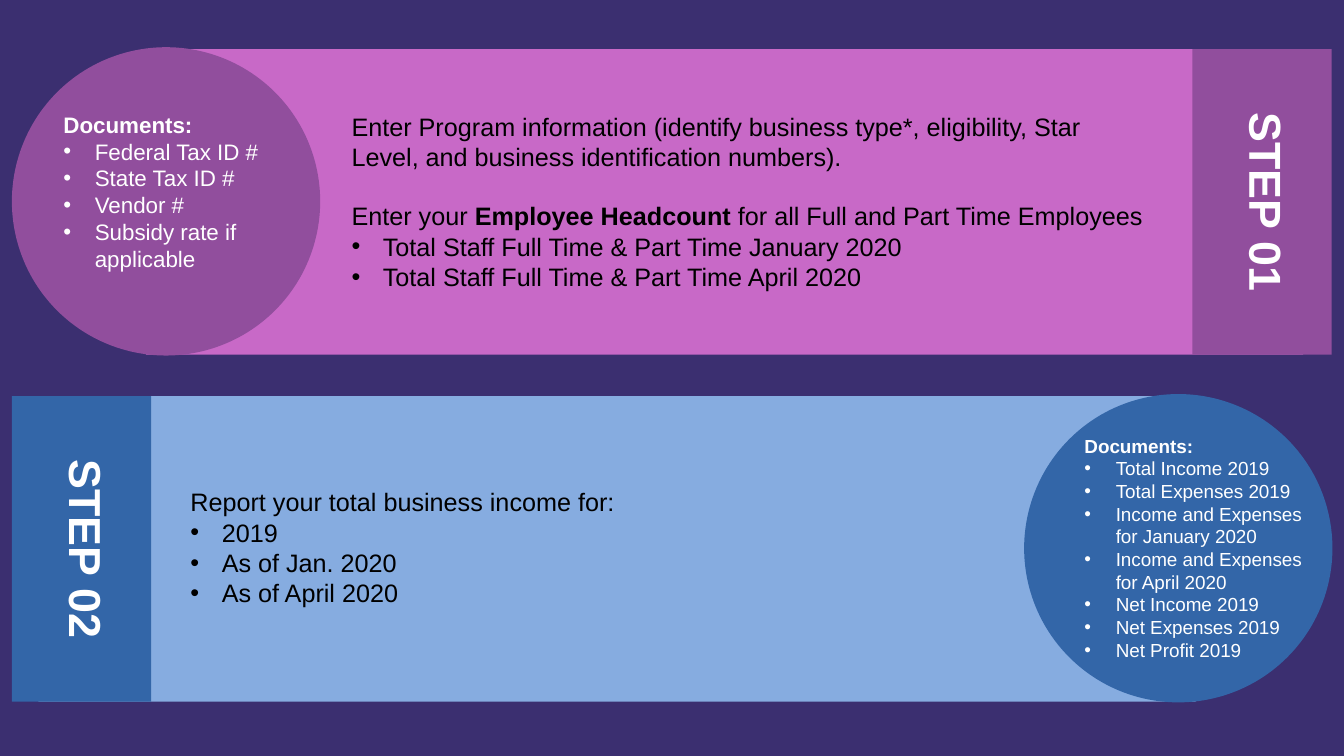
"""Builds a slide with two step panels, each with a task and its documents."""
from dataclasses import dataclass

from lxml import etree
from pptx import Presentation
from pptx.dml.color import RGBColor
from pptx.enum.shapes import MSO_SHAPE
from pptx.enum.text import MSO_AUTO_SIZE, PP_ALIGN
from pptx.oxml.ns import qn
from pptx.shapes.autoshape import Shape
from pptx.shapes.shapetree import GroupShapes, SlideShapes
from pptx.util import Cm, Pt

RECT = MSO_SHAPE.RECTANGLE
OVAL = MSO_SHAPE.OVAL
CENTER = PP_ALIGN.CENTER
FIT_TEXT = MSO_AUTO_SIZE.SHAPE_TO_FIT_TEXT

BAND_W, BAND_H = 29.16, 7.7
TAB_W, LABEL_W = 3.51, 1.88
CIRCLE = 7.77
CIRCLE_RISE = 0.05
INDENT = 0.79


@dataclass(frozen=True)
class Theme:
    """Colours, font and type sizes of the slide."""
    background: str = "3B2F70"
    pink: str = "C869C7"
    purple: str = "914E9D"
    light_blue: str = "86ACE0"
    blue: str = "3366A8"
    dark_text: str = "000000"
    light_text: str = "FFFFFF"
    font: str = "Arial"
    label_size: float = 32
    body_size: float = 18
    docs_size: float = 16
    small_docs_size: float = 13.5
    gap: float = 21


THEME = Theme()


@dataclass(frozen=True)
class Run:
    """A stretch of text with one weight."""
    text: str
    bold: bool = False


@dataclass(frozen=True)
class Para:
    """A paragraph made of runs."""
    runs: tuple[Run, ...]
    bullet: bool = False
    gap: float = 0


@dataclass(frozen=True)
class TextBlock:
    """A text box with its place in centimetres, size and colour."""
    left: float
    top: float
    width: float
    height: float
    size: float
    color: str
    paras: tuple[Para, ...]


@dataclass(frozen=True)
class Panel:
    """A step's band, circle, tab and label."""
    label: str
    top: float
    band_left: float
    circle_left: float
    tab_left: float
    label_left: float
    light: str
    dark: str


def line(text: str, bold: bool = False) -> Para:
    """Return a plain paragraph."""
    return Para((Run(text, bold),))


def bullets(*texts: str) -> tuple[Para, ...]:
    """Return one bulleted paragraph for each text."""
    return tuple(Para((Run(text),), bullet=True) for text in texts)


PANELS = (
    Panel("STEP 01", 1.24, 3.68, 0.3, 30.05, 30.86, THEME.pink, THEME.purple),
    Panel("STEP 02", 9.98, 0.97, 25.81, 0.3, 1.12, THEME.light_blue, THEME.blue),
)

BLOCKS = (
    TextBlock(8.61, 2.67, 20.73, 4.88, THEME.body_size, THEME.dark_text, (
        line("Enter Program information (identify business type*, eligibility, "
             "Star Level, and business identification numbers)."),
        Para((Run("Enter your "), Run("Employee Headcount", True),
              Run(" for all Full and Part Time Employees")), gap=THEME.gap),
        *bullets("Total Staff Full Time & Part Time January 2020",
                 "Total Staff Full Time & Part Time April 2020"))),
    TextBlock(1.35, 2.67, 5.69, 5.13, THEME.docs_size, THEME.light_text, (
        line("Documents:", True),
        *bullets("Federal Tax ID #", "State Tax ID #", "Vendor #",
                 "Subsidy rate if applicable"))),
    TextBlock(4.55, 12.14, 20.93, 3.33, THEME.body_size, THEME.dark_text, (
        line("Report your total business income for:"),
        *bullets("2019", "As of Jan. 2020", "As of April 2020"))),
    TextBlock(27.08, 10.82, 6.4, 6.02, THEME.small_docs_size, THEME.light_text, (
        line("Documents:", True),
        *bullets("Total Income 2019", "Total Expenses 2019",
                 "Income and Expenses for January 2020",
                 "Income and Expenses for April 2020",
                 "Net Income 2019", "Net Expenses 2019", "Net Profit 2019"))),
)


def add_block(shapes: SlideShapes | GroupShapes, block: TextBlock) -> Shape:
    """Add a text box and fill it run by run."""
    sp = shapes.add_textbox(Cm(block.left), Cm(block.top),
                            Cm(block.width), Cm(block.height))
    tf = sp.text_frame
    tf.word_wrap = True
    tf.auto_size = FIT_TEXT
    for i, para in enumerate(block.paras):
        p = tf.add_paragraph() if i else tf.paragraphs[0]
        if para.gap:
            p.space_before = Pt(para.gap)
        if para.bullet:
            pPr = p._p.get_or_add_pPr()
            pPr.set("marL", str(Cm(INDENT)))
            pPr.set("indent", str(-Cm(INDENT)))
            etree.SubElement(pPr, qn("a:buFont")).set("typeface", THEME.font)
            etree.SubElement(pPr, qn("a:buChar")).set("char", "•")
        for run in para.runs:
            r = p.add_run()
            r.text = run.text
            r.font.name = THEME.font
            r.font.size = Pt(block.size)
            r.font.bold = run.bold
            r.font.color.rgb = RGBColor.from_string(block.color)
    return sp


def add_filled(shapes: GroupShapes, kind: MSO_SHAPE, left: float, top: float,
               width: float, height: float, color: str) -> None:
    """Add a flat shape without outline or shadow."""
    sp = shapes.add_shape(kind, Cm(left), Cm(top), Cm(width), Cm(height))
    sp.shadow.inherit = False
    sp.fill.solid()
    sp.fill.fore_color.rgb = RGBColor.from_string(color)
    sp.line.fill.background()


def add_panel(shapes: SlideShapes, panel: Panel) -> None:
    """Add a step panel as one group."""
    group = shapes.add_group_shape().shapes
    add_filled(group, RECT, panel.band_left, panel.top, BAND_W, BAND_H, panel.light)
    add_filled(group, OVAL, panel.circle_left, panel.top - CIRCLE_RISE,
               CIRCLE, CIRCLE, panel.dark)
    add_filled(group, RECT, panel.tab_left, panel.top, TAB_W, BAND_H, panel.dark)
    sp = add_block(group, TextBlock(
        panel.label_left, panel.top, LABEL_W, BAND_H, THEME.label_size,
        THEME.light_text, (line(panel.label, True),)))
    sp.text_frame.paragraphs[0].alignment = CENTER
    sp.element.txBody.bodyPr.set("vert", "vert")


def main() -> None:
    """Build and save the slide."""
    prs = Presentation()
    prs.slide_width, prs.slide_height = Cm(33.87), Cm(19.05)
    s = prs.slides.add_slide(prs.slide_layouts[6])
    s.background.fill.solid()
    s.background.fill.fore_color.rgb = RGBColor.from_string(THEME.background)
    for panel in PANELS:
        add_panel(s.shapes, panel)
    for block in BLOCKS:
        add_block(s.shapes, block)
    prs.save("out.pptx")


if __name__ == "__main__":
    main()
